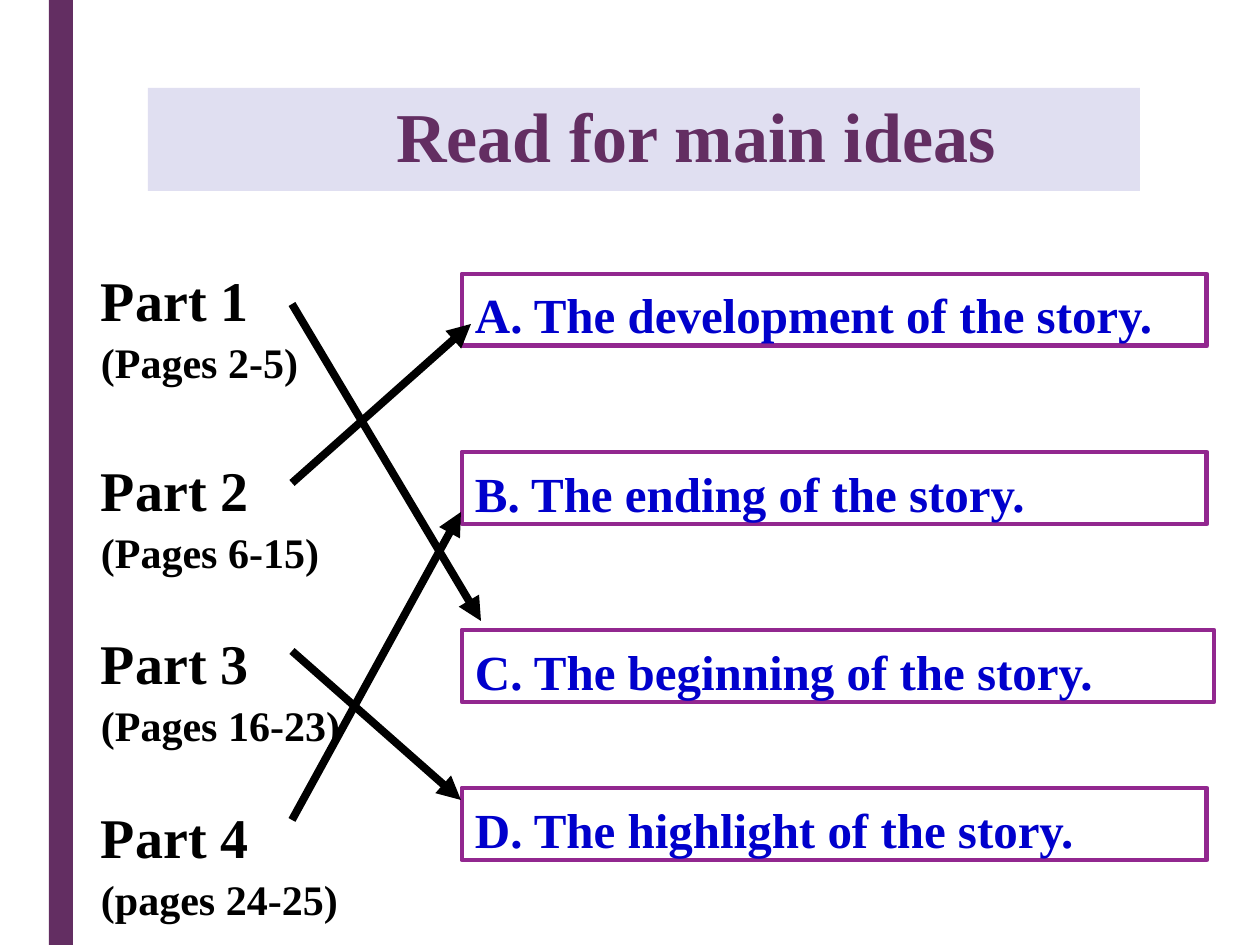
from dataclasses import dataclass

from lxml.etree import SubElement
from pptx import Presentation
from pptx.dml.color import RGBColor as Rgb
from pptx.enum.shapes import MSO_CONNECTOR as Connector, MSO_SHAPE as Shape
from pptx.enum.text import MSO_ANCHOR as Anchor, PP_ALIGN as Align
from pptx.oxml.ns import qn
from pptx.util import Emu, Pt

SCALE = 914400 // 126


@dataclass(frozen=True)
class Theme:
    """Colours, font and type sizes of the slide."""
    font: str = "Times New Roman"
    plum: Rgb = Rgb(0x63, 0x2E, 0x62)
    lavender: Rgb = Rgb(0xE0, 0xDF, 0xF1)
    border: Rgb = Rgb(0x92, 0x27, 0x8F)
    answer: Rgb = Rgb(0x00, 0x00, 0xCC)
    black: Rgb = Rgb(0, 0, 0)
    white: Rgb = Rgb(0xFF, 0xFF, 0xFF)
    title_size: int = 40
    part_size: int = 32
    answer_size: int = 28
    pages_size: int = 24
    border_width: float = 2.75
    arrow_width: float = 4.5


THEME = Theme()

PARTS = [
    ("Part 1", "(Pages 2-5)", 0),
    ("Part 2", "(Pages 6-15)", 39),
    ("Part 3", "(Pages 16-23)", 30),
    ("Part 4", "(pages 24-25)", 30),
]
ANSWERS = [
    ("A. The development of the story.", 274, 745),
    ("B. The ending of the story.", 452, 745),
    ("C. The beginning of the story.", 630, 752),
    ("D. The highlight of the story.", 788, 745),
]
ARROW_LEFT = 292
MATCHES = [
    (304, (481, 621)),
    (483, (471, 324)),
    (651, (461, 800)),
    (820, (461, 512)),
]


def px(length):
    """Turn whole pixels into EMU."""
    return Emu(length * SCALE)


def apply(target, values):
    """Set each named attribute on the target."""
    for name, value in values.items():
        setattr(target, name, value)


def set_frame(frame, top, left=13):
    """Wrap the text and set its insets from the top left."""
    apply(frame, {"word_wrap": True, "vertical_anchor": Anchor.TOP,
                  "margin_top": px(top), "margin_left": px(left),
                  "margin_right": px(13), "margin_bottom": 0})


def write(paragraph, text, size, color, align=Align.LEFT, before=0):
    """Fill a paragraph with one bold run."""
    apply(paragraph, {"alignment": align, "space_before": Pt(before)})
    run = paragraph.add_run()
    run.text = text
    apply(run.font, {"name": THEME.font, "size": Pt(size), "bold": True})
    run.font.color.rgb = color


def add_box(slide, box, fill, border=None):
    """Add a flat rectangle with an optional border."""
    rectangle = slide.shapes.add_shape(Shape.RECTANGLE, *map(px, box))
    rectangle.shadow.inherit = False
    rectangle.fill.solid()
    rectangle.fill.fore_color.rgb = fill
    if border is None:
        rectangle.line.fill.background()
    else:
        rectangle.line.color.rgb = border
        rectangle.line.width = Pt(THEME.border_width)
    return rectangle


def add_title(slide, text):
    """Add the title band with its text right of the centre."""
    frame = add_box(slide, (148, 88, 992, 103), THEME.lavender).text_frame
    set_frame(frame, top=5, left=117)
    write(frame.paragraphs[0], text, THEME.title_size, THEME.plum, Align.CENTER)


def add_parts(slide):
    """List the story parts with their pages."""
    frame = slide.shapes.add_textbox(*map(px, (88, 253, 363, 680))).text_frame
    set_frame(frame, top=13)
    for index, (part, pages, gap) in enumerate(PARTS):
        heading = frame.add_paragraph() if index else frame.paragraphs[0]
        write(heading, part, THEME.part_size, THEME.black, before=gap)
        write(frame.add_paragraph(), pages, THEME.pages_size, THEME.black, before=2)


def add_answer(slide, text, top, width):
    """Add one bordered answer."""
    frame = add_box(slide, (462, top, width, 72), THEME.white, THEME.border).text_frame
    set_frame(frame, top=11)
    write(frame.paragraphs[0], text, THEME.answer_size, THEME.answer)


def add_arrow(slide, start, end):
    """Draw a matching arrow from a part to its answer."""
    arrow = slide.shapes.add_connector(Connector.STRAIGHT, *map(px, start + end))
    arrow.line.color.rgb = THEME.black
    arrow.line.width = Pt(THEME.arrow_width)
    SubElement(arrow.line._get_or_add_ln(), qn("a:tailEnd"), type="triangle")
    SubElement(arrow._element.spPr, qn("a:effectLst"))


def main():
    """Build the slide and save it."""
    deck = Presentation()
    apply(deck, {"slide_width": px(1260), "slide_height": px(945)})
    slide = deck.slides.add_slide(deck.slide_layouts[6])
    add_box(slide, (49, 0, 24, 945), THEME.plum)
    add_title(slide, "Read for main ideas")
    add_parts(slide)
    for text, top, width in ANSWERS:
        add_answer(slide, text, top, width)
    for start_top, end in MATCHES:
        add_arrow(slide, (ARROW_LEFT, start_top), end)
    deck.save("out.pptx")


if __name__ == "__main__":
    main()
